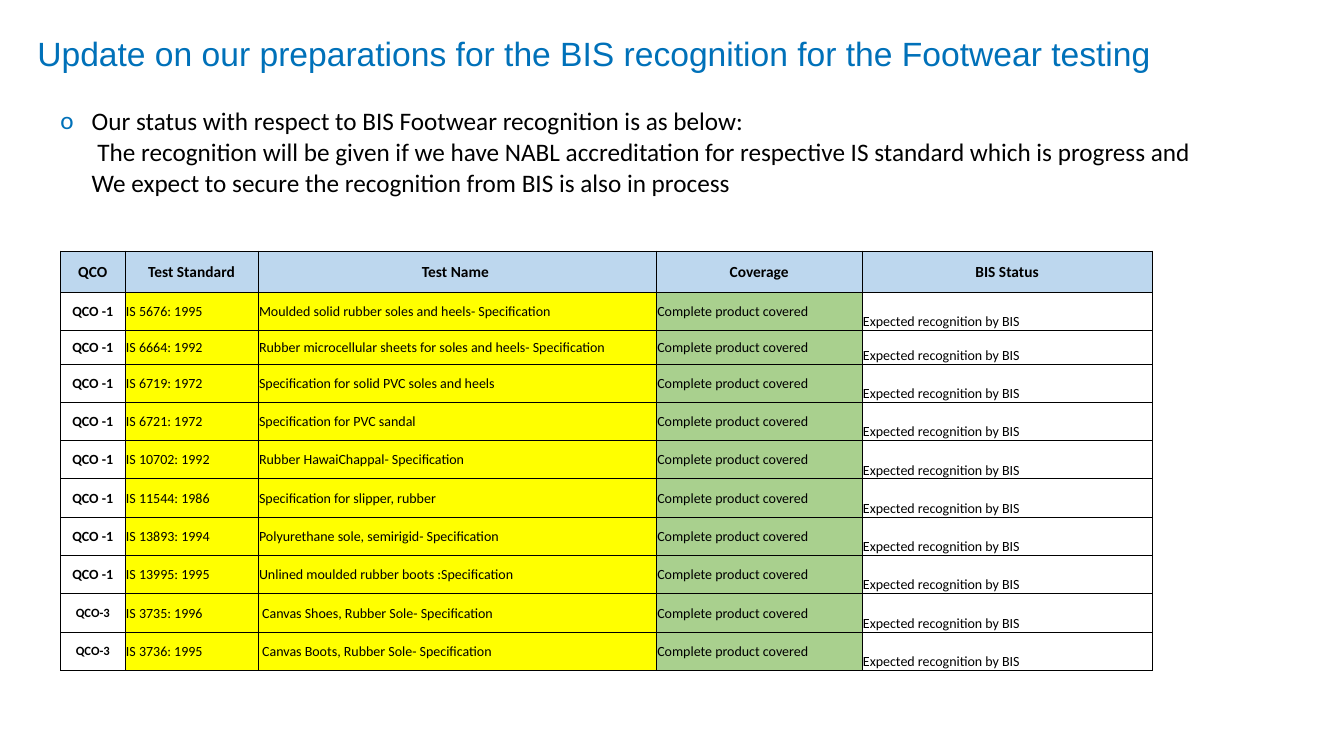
"""Build the slide on footwear testing recognition status."""
from dataclasses import dataclass

from lxml.etree import SubElement
from pptx import Presentation
from pptx.dml.color import RGBColor
from pptx.enum.text import MSO_ANCHOR, PP_ALIGN
from pptx.oxml.ns import qn
from pptx.util import Inches, Pt

BLUE, BLACK = "0071B9", "000000"
HEAD, YELLOW, GREEN = "BDD7EE", "FFFF00", "A9D08E"


@dataclass
class Test:
    code: str
    name: str
    order: str = "QCO -1"
    size: int = 10
    high: float = 0.38


@dataclass
class Column:
    title: str
    wide: float
    fill: str | None = None
    align: PP_ALIGN = PP_ALIGN.LEFT
    anchor: MSO_ANCHOR = MSO_ANCHOR.MIDDLE
    bold: bool = False


COLUMNS = [
    Column("QCO", 0.64, align=PP_ALIGN.CENTER, bold=True),
    Column("Test Standard", 1.32, YELLOW),
    Column("Test Name ", 3.95, YELLOW),
    Column("Coverage", 2.04, GREEN),
    Column("BIS Status", 2.88, anchor=MSO_ANCHOR.BOTTOM),
]
TESTS = [
    Test("IS 5676: 1995", "Moulded solid rubber soles and heels- Specification"),
    Test("IS 6664: 1992", "Rubber microcellular sheets for soles and heels- Specification", high=0.33),
    Test("IS 6719: 1972", "Specification for solid PVC soles and heels"),
    Test("IS 6721: 1972", "Specification for PVC sandal"),
    Test("IS 10702: 1992", "Rubber HawaiChappal- Specification"),
    Test("IS 11544: 1986", "Specification for slipper, rubber"),
    Test("IS 13893: 1994", "Polyurethane sole, semirigid- Specification"),
    Test("IS 13995: 1995", "Unlined moulded rubber boots :Specification"),
    Test("IS 3735: 1996", " Canvas Shoes, Rubber Sole- Specification", "QCO-3", 9),
    Test("IS 3736: 1995", " Canvas Boots, Rubber Sole- Specification", "QCO-3", 9),
]
STATUS = (
    "Our status with respect to BIS Footwear recognition is as below:\v"
    " The recognition will be given if we have NABL accreditation for respective IS standard "
    "which is progress and We expect to secure the recognition from BIS is also in process"
)


def color(code: str) -> RGBColor:
    return RGBColor.from_string(code)


def write(frame, text: str, *, size: int, font: str = "Calibri", tint: str = BLACK,
          bold: bool = False, align: PP_ALIGN = PP_ALIGN.LEFT):
    para = frame.paragraphs[0]
    para.text = text
    para.alignment = align
    for run in para.runs:
        run.font.size = Pt(size)
        run.font.name = font
        run.font.bold = bold
        run.font.color.rgb = color(tint)
    return para


def add_box(slide, left: float, top: float, wide: float, high: float,
            pads: tuple[float, float, float, float]):
    box = slide.shapes.add_textbox(Inches(left), Inches(top), Inches(wide), Inches(high))
    frame = box.text_frame
    frame.word_wrap = True
    (frame.margin_left, frame.margin_top,
     frame.margin_right, frame.margin_bottom) = map(Inches, pads)
    return frame


def add_bullet(para, mark: str, tint: str, indent: float) -> None:
    props = para._p.get_or_add_pPr()
    props.set("marL", str(Inches(indent)))
    props.set("indent", str(-Inches(indent)))
    SubElement(SubElement(props, qn("a:buClr")), qn("a:srgbClr"), val=tint)
    SubElement(props, qn("a:buFont"), typeface="Calibri")
    SubElement(props, qn("a:buChar"), char=mark)


def add_edges(cell) -> None:
    props = cell._tc.get_or_add_tcPr()
    for side in "LRTB":
        line = SubElement(props, qn(f"a:ln{side}"), w=str(Pt(0.5)))
        SubElement(SubElement(line, qn("a:solidFill")), qn("a:srgbClr"), val=BLACK)


def fill_cell(cell, text: str, fill: str | None, anchor: MSO_ANCHOR, *,
              size: int, bold: bool, align: PP_ALIGN) -> None:
    cell.margin_left = cell.margin_right = cell.margin_top = Inches(0.01)
    cell.margin_bottom = 0
    cell.vertical_anchor = anchor
    add_edges(cell)
    if fill:
        cell.fill.solid()
        cell.fill.fore_color.rgb = color(fill)
    else:
        cell.fill.background()
    write(cell.text_frame, text, size=size, bold=bold, align=align)


def add_grid(slide) -> None:
    highs = [0.41] + [test.high for test in TESTS]
    wide = sum(col.wide for col in COLUMNS)
    grid = slide.shapes.add_table(len(highs), len(COLUMNS), Inches(0.6), Inches(2.49),
                                  Inches(wide), Inches(sum(highs))).table
    grid.horz_banding = False
    for row, high in zip(grid.rows, highs):
        row.height = Inches(high)
    for x, col in enumerate(COLUMNS):
        grid.columns[x].width = Inches(col.wide)
        fill_cell(grid.cell(0, x), col.title, HEAD, MSO_ANCHOR.MIDDLE,
                  size=11, bold=True, align=PP_ALIGN.CENTER)
    for y, test in enumerate(TESTS, 1):
        texts = (test.order, test.code, test.name,
                 "Complete product covered", "Expected recognition by BIS")
        for x, (col, text) in enumerate(zip(COLUMNS, texts)):
            fill_cell(grid.cell(y, x), text, col.fill, col.anchor,
                      size=10 if x else test.size, bold=col.bold, align=col.align)


def main() -> None:
    deck = Presentation()
    deck.slide_width, deck.slide_height = Inches(13.33), Inches(7.5)
    slide = deck.slides.add_slide(deck.slide_layouts[6])
    title = add_box(slide, 0.37, 0.33, 12.52, 0.67, (0, 0, 0, 0))
    write(title, "Update on our preparations for the BIS recognition for the Footwear testing",
          size=24, font="Arial", tint=BLUE)
    body = add_box(slide, 0.6, 0.99, 11.65, 1.32, (0, 0.05, 0.1, 0.05))
    para = write(body, STATUS, size=18)
    add_bullet(para, "o", BLUE, 0.31)
    para.line_spacing = Pt(22)
    add_grid(slide)
    deck.save("out.pptx")


if __name__ == "__main__":
    main()
